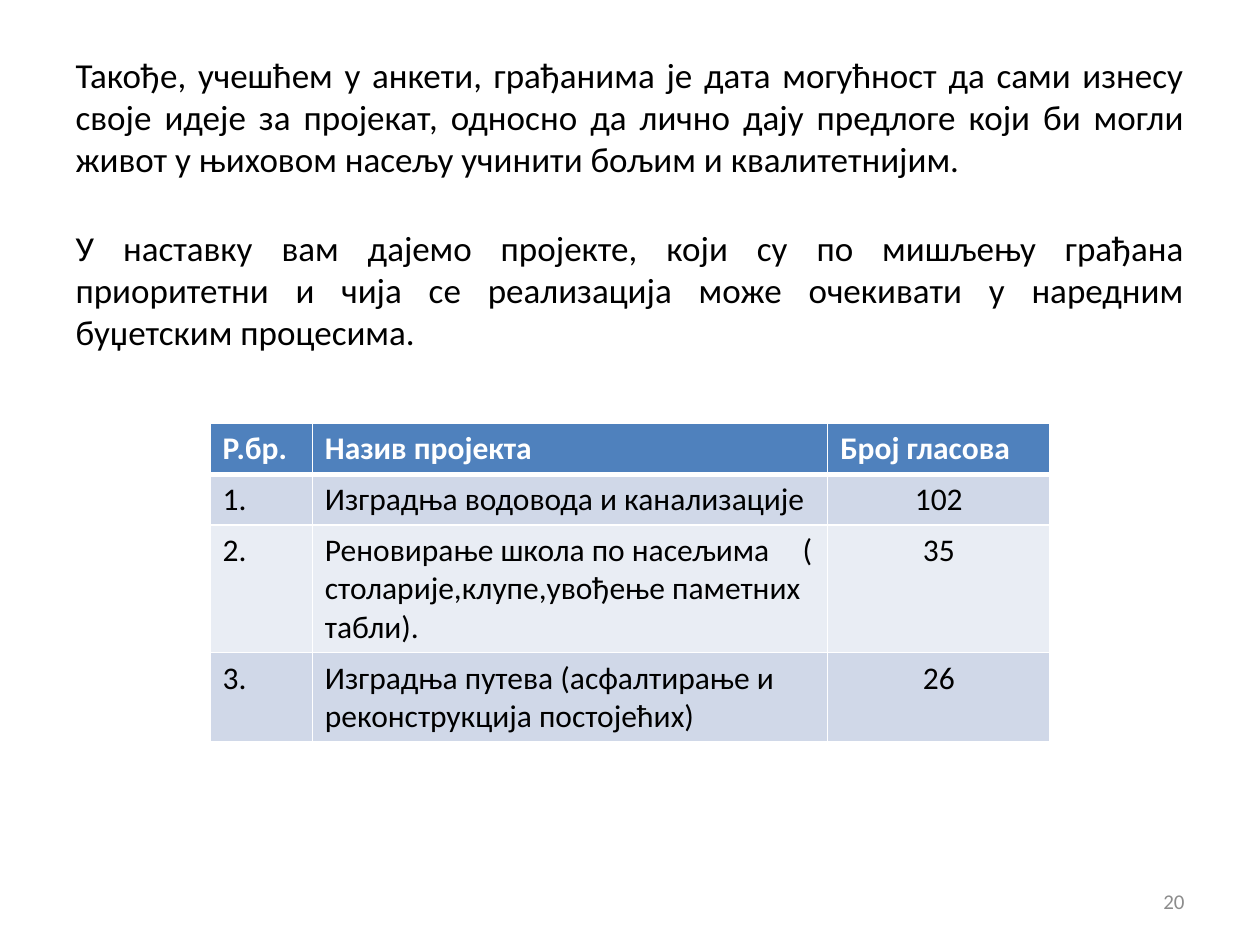
from dataclasses import dataclass

from lxml import etree
from pptx import Presentation
from pptx.dml.color import RGBColor
from pptx.enum import text as t
from pptx.oxml import ns
from pptx.util import Pt


@dataclass(frozen=True)
class Theme:
    font: str = "Calibri"
    black: str = "000000"
    white: str = "FFFFFF"
    gray: str = "8C8C8C"
    header: str = "4F81BD"
    bands: tuple = ("D0D8E8", "E9EDF4")
    text_size: int = 20
    table_size: int = 18
    number_size: int = 12


THEME = Theme()

INTRO = ("Такође, учешћем у анкети, грађанима је дата могућност да сами изнесу "
         "своје идеје за пројекат, односно да лично дају предлоге који би могли "
         "живот у њиховом насељу учинити бољим и квалитетнијим.")
LEAD_IN = ("У наставку вам дајемо пројекте, који су по мишљењу грађана "
           "приоритетни и чија се реализација може очекивати у наредним "
           "буџетским процесима.")
PROJECTS = [
    ("Р.бр.", "Назив пројекта", "Број гласова"),
    ("1.", "Изградња водовода и канализације", "102"),
    ("2.", "Реновирање школа по насељима\t( столарије,клупе,увођење паметних табли).", "35"),
    ("3.", "Изградња путева (асфалтирање и реконструкција постојећих)", "26"),
]
COLUMN_WIDTHS = (58.5, 294.5, 127)
ROW_HEIGHTS = (29, 29, 73, 51)
PAREN_TAB = 273


def write_text(frame, text, *, size, color=THEME.black, bold=False, align=None):
    paragraph = frame.paragraphs[0]
    paragraph.alignment = align
    run = paragraph.add_run()
    run.text = text
    run.font.name = THEME.font
    run.font.size = Pt(size)
    run.font.bold = bold
    run.font.color.rgb = RGBColor.from_string(color)
    return paragraph


def place(shape, left, top, width, height):
    shape.left, shape.top = Pt(left), Pt(top)
    shape.width, shape.height = Pt(width), Pt(height)


def fill_placeholder(shape, text, box):
    place(shape, *box)
    shape.text_frame.auto_size = t.MSO_AUTO_SIZE.NONE
    return write_text(shape.text_frame, text, size=THEME.text_size,
                      align=t.PP_ALIGN.JUSTIFY)


def remove_bullet(paragraph):
    properties = paragraph._p.get_or_add_pPr()
    properties.set("marL", "0")
    properties.set("indent", "0")
    etree.SubElement(properties, ns.qn("a:buNone"))


def add_tab_stop(paragraph, position):
    tabs = etree.SubElement(paragraph._p.get_or_add_pPr(), ns.qn("a:tabLst"))
    etree.SubElement(tabs, ns.qn("a:tab"), pos=str(Pt(position)), algn="l")


def set_borders(cell, top, bottom):
    """Draw white cell edges; call before the fill, which must follow them."""
    properties = cell._tc.get_or_add_tcPr()
    for side, width in (("L", 1), ("R", 1), ("T", top), ("B", bottom)):
        line = etree.SubElement(properties, ns.qn(f"a:ln{side}"), w=str(Pt(width)))
        fill = etree.SubElement(line, ns.qn("a:solidFill"))
        etree.SubElement(fill, ns.qn("a:srgbClr"), val=THEME.white)


def format_cell(cell, text, row, column):
    is_header = row == 0
    set_borders(cell, top=3 if row == 1 else 1, bottom=3 if is_header else 1)
    cell.fill.solid()
    color = THEME.header if is_header else THEME.bands[(row - 1) % 2]
    cell.fill.fore_color.rgb = RGBColor.from_string(color)
    centered = column == 2 and not is_header
    paragraph = write_text(
        cell.text_frame, text, size=THEME.table_size, bold=is_header,
        color=THEME.white if is_header else THEME.black,
        align=t.PP_ALIGN.CENTER if centered else t.PP_ALIGN.LEFT)
    if "\t" in text:
        add_tab_stop(paragraph, PAREN_TAB)


def add_project_table(slide, left, top):
    table = slide.shapes.add_table(
        len(PROJECTS), len(COLUMN_WIDTHS), Pt(left), Pt(top),
        Pt(sum(COLUMN_WIDTHS)), Pt(sum(ROW_HEIGHTS))).table
    for column, width in zip(table.columns, COLUMN_WIDTHS):
        column.width = Pt(width)
    for row, height in zip(table.rows, ROW_HEIGHTS):
        row.height = Pt(height)
    for row, values in enumerate(PROJECTS):
        for column, value in enumerate(values):
            format_cell(table.cell(row, column), value, row, column)


def add_page_number(slide, number):
    box = slide.shapes.add_textbox(Pt(516), Pt(500.5), Pt(168), Pt(28.5))
    box.text_frame.word_wrap = True
    box.text_frame.vertical_anchor = t.MSO_ANCHOR.MIDDLE
    write_text(box.text_frame, number, size=THEME.number_size,
               color=THEME.gray, align=t.PP_ALIGN.RIGHT)


def main():
    presentation = Presentation()
    presentation.slide_width, presentation.slide_height = Pt(720), Pt(540)
    slide = presentation.slides.add_slide(presentation.slide_layouts[1])
    fill_placeholder(slide.shapes.title, INTRO, (36, 21.6, 648, 90))
    lead_in = fill_placeholder(slide.placeholders[1], LEAD_IN, (36, 126, 648, 356.4))
    remove_bullet(lead_in)
    add_page_number(slide, "20")
    add_project_table(slide, 120, 242)
    presentation.save("out.pptx")


if __name__ == "__main__":
    main()
